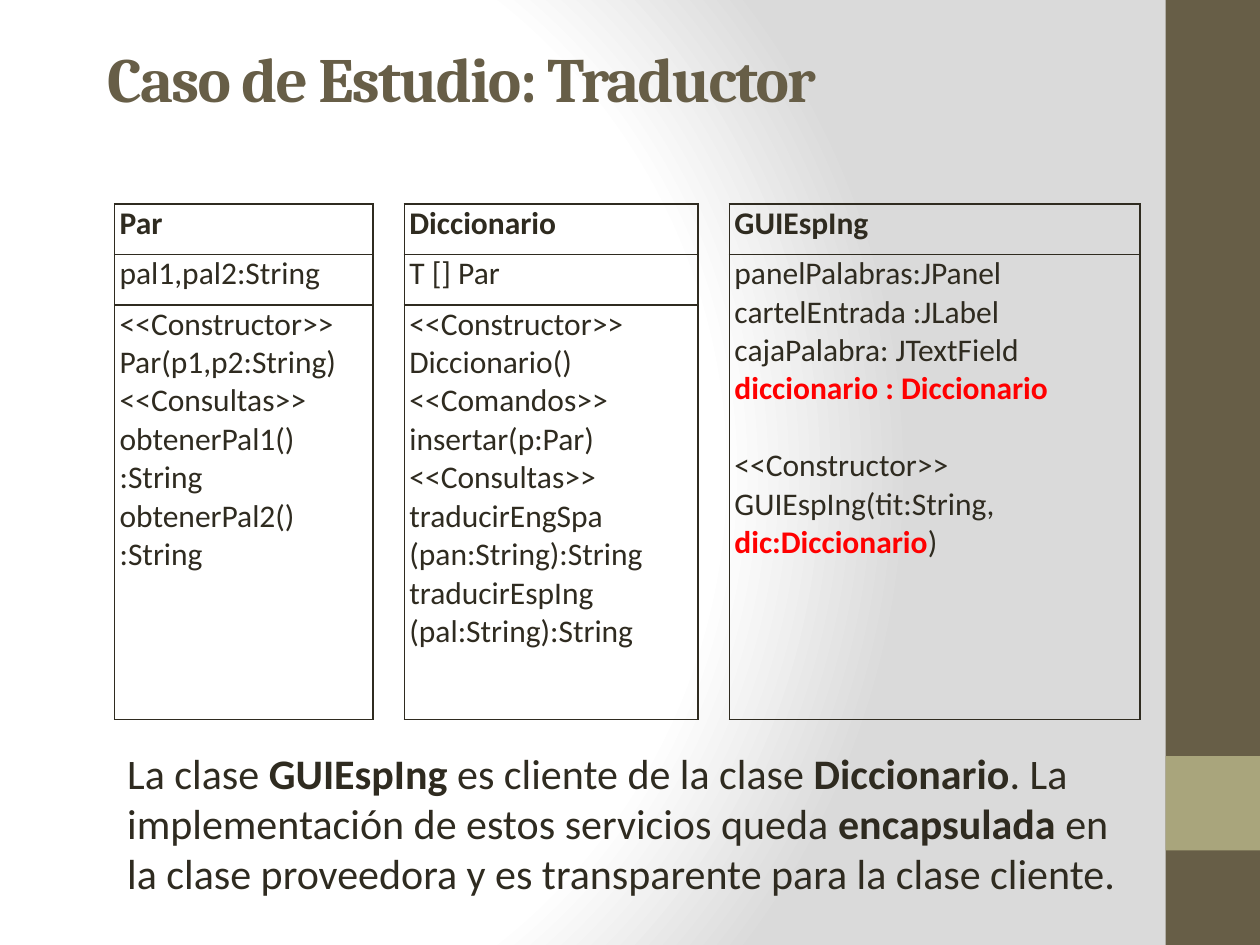
"""Build the slide with the class diagram of the translator case study."""
from dataclasses import dataclass

from lxml.etree import SubElement
from pptx import Presentation
from pptx.dml.color import RGBColor
from pptx.enum.shapes import MSO_SHAPE
from pptx.enum.text import MSO_ANCHOR, MSO_AUTO_SIZE, PP_ALIGN
from pptx.oxml import parse_xml
from pptx.oxml.ns import nsdecls, qn
from pptx.slide import Slide
from pptx.table import Table, _Cell
from pptx.text.text import Font, TextFrame, _Paragraph
from pptx.util import Inches, Pt

INK = RGBColor(0x2F, 0x2B, 0x20)
BROWN = RGBColor(0x67, 0x5E, 0x47)
OLIVE = RGBColor(0xA9, 0xA5, 0x7C)
RED = RGBColor(0xFF, 0x00, 0x00)
NO_STYLE = "{2D5ABB26-0587-4C30-8999-92F81FD0307C}"
BACKGROUND = f"""<p:bg {nsdecls("p", "a")}><p:bgPr>
<a:gradFill rotWithShape="1"><a:gsLst>
<a:gs pos="0"><a:srgbClr val="FFFFFF"/></a:gs>
<a:gs pos="75000"><a:srgbClr val="FFFFFF"/></a:gs>
<a:gs pos="100000"><a:srgbClr val="DADADA"/></a:gs></a:gsLst>
<a:path path="circle"><a:fillToRect l="20000" t="50000" r="100000" b="50000"/></a:path>
</a:gradFill><a:effectLst/></p:bgPr></p:bg>"""


@dataclass(frozen=True)
class Piece:
    text: str
    bold: bool = False
    color: RGBColor = INK


@dataclass(frozen=True)
class Line:
    pieces: tuple[Piece, ...]
    space_before: float = 0


@dataclass(frozen=True)
class ClassBox:
    column: int
    sections: tuple[tuple[Line, ...], ...]


@dataclass(frozen=True)
class Band:
    top: float
    height: float
    color: RGBColor


def plain(*texts: str) -> tuple[Line, ...]:
    return tuple(Line((Piece(text),)) for text in texts)


def heading(text: str) -> tuple[Line, ...]:
    return (Line((Piece(text, True),)),)


BANDS = (Band(0, 7.5, BROWN), Band(6, 0.75, OLIVE))
COLUMN_WIDTHS = (2.05, 0.25, 2.33, 0.25, 3.26)
ROW_HEIGHTS = (0.36, 0.36, 3.29)
CLASS_BOXES = (
    ClassBox(0, (
        heading("Par"),
        plain("pal1,pal2:String"),
        plain("<<Constructor>>", "Par(p1,p2:String)", "<<Consultas>>",
              "obtenerPal1()", ":String", "obtenerPal2()", ":String"),
    )),
    ClassBox(2, (
        heading("Diccionario"),
        plain("T [] Par"),
        plain("<<Constructor>>", "Diccionario()", "<<Comandos>>",
              "insertar(p:Par)", "<<Consultas>>", "traducirEngSpa",
              "(pan:String):String", "traducirEspIng", "(pal:String):String"),
    )),
    ClassBox(4, (
        heading("GUIEspIng"),
        plain("panelPalabras:JPanel", "cartelEntrada :JLabel cajaPalabra: JTextField") + (
            Line((Piece("diccionario : Diccionario", True, RED),)),
            Line((Piece("<<Constructor>>"),), space_before=22),
            Line((Piece("GUIEspIng(tit:String, "),
                  Piece("dic:Diccionario", True, RED), Piece(")"))),
        ),
    )),
)
SUMMARY = Line((
    Piece("La clase "), Piece("GUIEspIng", True),
    Piece(" es cliente de la clase "), Piece("Diccionario", True),
    Piece(". La implementación de estos servicios queda "), Piece("encapsulada", True),
    Piece(" en la clase proveedora y es transparente para la clase cliente."),
))


def format_font(font: Font, name: str, size: float, bold: bool, color: RGBColor) -> None:
    font.name, font.size, font.bold = name, Pt(size), bold
    font.color.rgb = color


def write_line(paragraph: _Paragraph, line: Line, size: float) -> None:
    paragraph.alignment = PP_ALIGN.LEFT
    paragraph.space_before = Pt(line.space_before)
    for piece in line.pieces:
        run = paragraph.add_run()
        run.text = piece.text
        format_font(run.font, "Calibri", size, piece.bold, piece.color)


def write_lines(text_frame: TextFrame, lines: tuple[Line, ...], size: float) -> None:
    for index, line in enumerate(lines):
        paragraph = text_frame.add_paragraph() if index else text_frame.paragraphs[0]
        write_line(paragraph, line, size)


def draw_borders(cell: _Cell, sides: str) -> None:
    properties = cell._tc.get_or_add_tcPr()
    for side in sides:
        border = SubElement(properties, qn(f"a:ln{side}"), w=str(Pt(1)))
        fill = SubElement(border, qn("a:solidFill"))
        SubElement(fill, qn("a:srgbClr"), val=str(INK))
    cell.fill.background()


def fill_class_box(table: Table, box: ClassBox) -> None:
    last_row = len(ROW_HEIGHTS) - 1
    last_section = len(box.sections) - 1
    if last_section < last_row:
        table.cell(last_section, box.column).merge(table.cell(last_row, box.column))
    for row in range(len(ROW_HEIGHTS)):
        cell = table.cell(row, box.column)
        draw_borders(cell, "LRB" if cell.is_spanned else "LRTB")
        cell.margin_left = cell.margin_right = Inches(0.04)
        cell.margin_top = cell.margin_bottom = 0
        if row <= last_section:
            write_lines(cell.text_frame, box.sections[row], 18)


def add_class_table(slide: Slide) -> None:
    frame = slide.shapes.add_table(
        len(ROW_HEIGHTS), len(COLUMN_WIDTHS), Inches(0.91), Inches(1.62),
        Inches(sum(COLUMN_WIDTHS)), Inches(sum(ROW_HEIGHTS)))
    table = frame.table
    table.first_row = table.horz_banding = False
    table._tbl.tblPr.find(qn("a:tableStyleId")).text = NO_STYLE
    for column, width in zip(table.columns, COLUMN_WIDTHS):
        column.width = Inches(width)
    for row, height in zip(table.rows, ROW_HEIGHTS):
        row.height = Inches(height)
    for box in CLASS_BOXES:
        fill_class_box(table, box)
    for gap in (1, 3):
        for row in range(len(ROW_HEIGHTS)):
            draw_borders(table.cell(row, gap), "LR")


def add_band(slide: Slide, band: Band) -> None:
    shape = slide.shapes.add_shape(
        MSO_SHAPE.RECTANGLE, Inches(9.25), Inches(band.top), Inches(0.75), Inches(band.height))
    shape.shadow.inherit = False
    shape.fill.solid()
    shape.fill.fore_color.rgb = band.color
    shape.line.fill.background()


def write_title(slide: Slide) -> None:
    title = slide.shapes.title
    title.left, title.top, title.width, title.height = map(Inches, (0.75, 0, 8.5, 1.23))
    title.text_frame.text = "Caso de Estudio: Traductor"
    title.text_frame.vertical_anchor = MSO_ANCHOR.MIDDLE
    paragraph = title.text_frame.paragraphs[0]
    paragraph.alignment = PP_ALIGN.LEFT
    run = paragraph.runs[0]
    format_font(run.font, "Cambria", 36, True, BROWN)
    run.font._element.set("spc", "-100")


def write_summary(slide: Slide) -> None:
    body = slide.placeholders[1]
    body.left, body.top, body.width, body.height = map(Inches, (0.91, 5.88, 8.11, 1.31))
    body.text_frame.auto_size = MSO_AUTO_SIZE.SHAPE_TO_FIT_TEXT
    paragraph = body.text_frame.paragraphs[0]
    write_line(paragraph, SUMMARY, 24)
    properties = paragraph._p.get_or_add_pPr()
    properties.set("marL", "0")
    properties.set("indent", "0")
    SubElement(properties, qn("a:buNone"))


def main() -> None:
    presentation = Presentation()
    presentation.slide_width, presentation.slide_height = Inches(10), Inches(7.5)
    slide = presentation.slides.add_slide(presentation.slide_layouts[1])
    slide._element.cSld.insert(0, parse_xml(BACKGROUND))
    for band in BANDS:
        add_band(slide, band)
    write_title(slide)
    add_class_table(slide)
    write_summary(slide)
    presentation.save("out.pptx")


if __name__ == "__main__":
    main()
